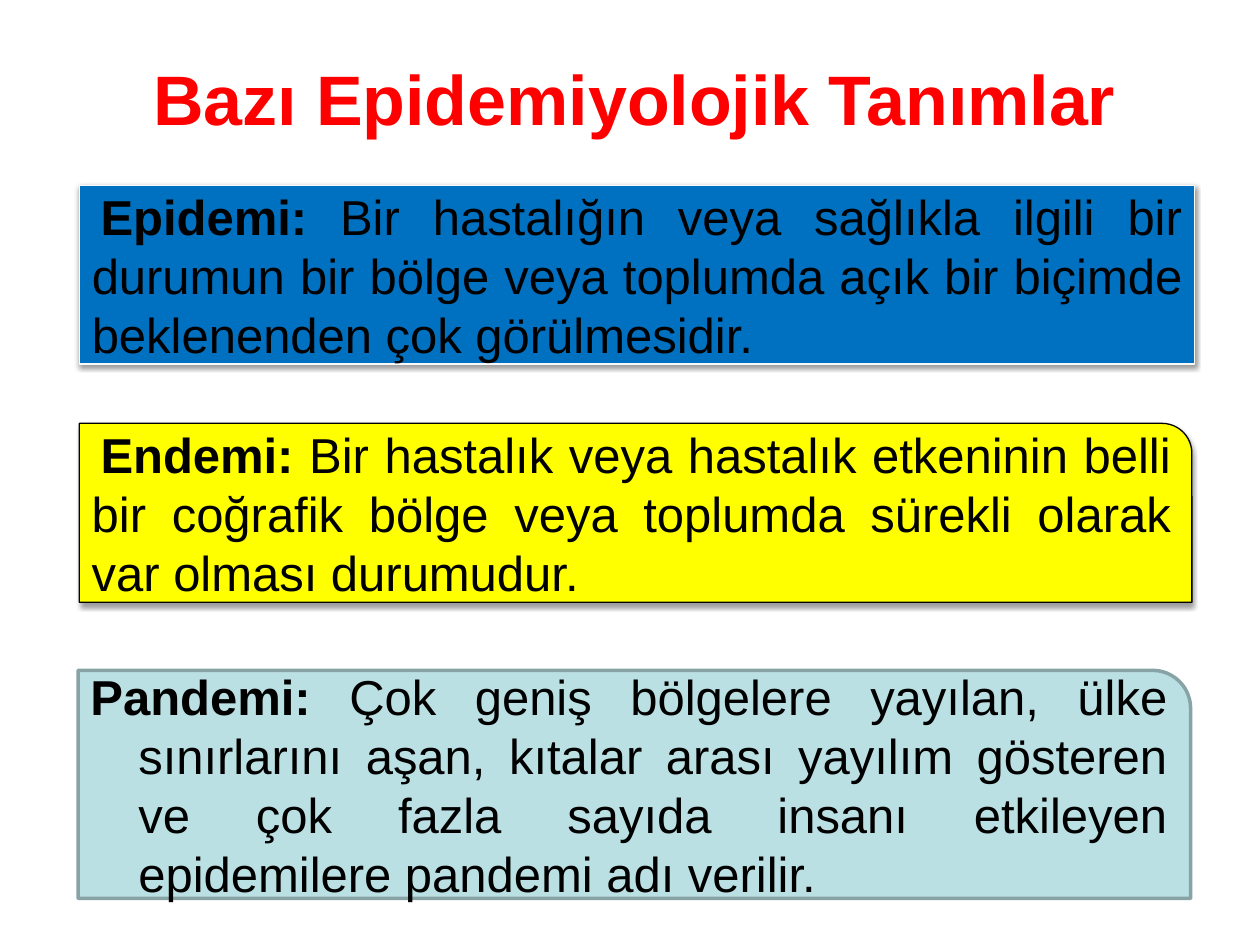
from dataclasses import dataclass

from lxml.etree import SubElement
from pptx import Presentation
from pptx.dml.color import RGBColor
from pptx.enum.shapes import MSO_SHAPE as Form
from pptx.enum.text import MSO_ANCHOR as Anchor, PP_ALIGN as Align
from pptx.oxml.ns import qn
from pptx.shapes.autoshape import Shape
from pptx.slide import Slide
from pptx.util import Inches, Pt


@dataclass
class Card:
    term: str
    text: str
    form: Form
    left: float
    top: float
    width: float
    height: float
    fill: str
    edge: str
    weight: float
    margin: float
    indent: float
    space: float
    shade: bool


CARDS = [
    Card("Epidemi:", " Bir hastalığın veya sağlıkla ilgili bir durumun bir bölge veya "
         "toplumda açık bir biçimde beklenenden çok görülmesidir.",
         Form.RECTANGLE, 0.63, 1.47, 8.85, 1.42,
         "0070C0", "F9F9F9", 0.75, 0, 0.07, 0, True),
    Card("Endemi:", " Bir hastalık veya hastalık etkeninin belli bir coğrafik bölge "
         "veya toplumda sürekli olarak var olması durumudur.",
         Form.ROUND_1_RECTANGLE, 0.63, 3.36, 8.83, 1.42,
         "FFFF00", "000000", 0.75, 0, 0.07, 0, True),
    Card("Pandemi:", " Çok geniş bölgelere yayılan, ülke sınırlarını aşan, kıtalar "
         "arası yayılım gösteren ve çok fazla sayıda insanı etkileyen epidemilere "
         "pandemi adı verilir.",
         Form.ROUND_1_RECTANGLE, 0.62, 5.32, 8.83, 1.81,
         "BBE0E3", "88A3A6", 2, 0.38, -0.38, 5.6, False),
]


def color(code: str) -> RGBColor:
    return RGBColor.from_string(code)


def add_shade(shape: Shape) -> None:
    effects = shape._element.spPr.find(qn("a:effectLst"))
    outer = SubElement(effects, qn("a:outerShdw"), blurRad=str(Pt(3.1)),
                       dist=str(Pt(1.6)), dir="5400000", rotWithShape="0")
    tint = SubElement(outer, qn("a:srgbClr"), val="000000")
    SubElement(tint, qn("a:alpha"), val="38000")


def add_title(slide: Slide, text: str) -> None:
    box = slide.shapes.add_textbox(Inches(0.31), Inches(0.44), Inches(9.45), Inches(1.25))
    frame = box.text_frame
    frame.word_wrap = True
    frame.vertical_anchor = Anchor.TOP
    frame.margin_top = 0
    para = frame.paragraphs[0]
    para.text = text
    para.alignment = Align.CENTER
    font = para.font
    font.name, font.size, font.bold = "Arial", Pt(40), True
    font.color.rgb = color("FF0000")


def add_card(slide: Slide, card: Card) -> None:
    shape = slide.shapes.add_shape(card.form, Inches(card.left), Inches(card.top),
                                   Inches(card.width), Inches(card.height))
    shape.fill.solid()
    shape.fill.fore_color.rgb = color(card.fill)
    shape.line.color.rgb = color(card.edge)
    shape.line.width = Pt(card.weight)
    shape.shadow.inherit = False
    if card.shade:
        add_shade(shape)
    frame = shape.text_frame
    frame.word_wrap = True
    frame.vertical_anchor = Anchor.MIDDLE
    para = frame.paragraphs[0]
    para.alignment = Align.JUSTIFY
    para.space_before = Pt(card.space)
    props = para._p.get_or_add_pPr()
    props.set("marL", str(Inches(card.margin)))
    props.set("indent", str(Inches(card.indent)))
    font = para.font
    font.name, font.size = "Arial", Pt(28)
    font.color.rgb = color("000000")
    for text, bold in ((card.term, True), (card.text, False)):
        run = para.add_run()
        run.text = text
        run.font.bold = bold


def main() -> None:
    deck = Presentation()
    deck.slide_width, deck.slide_height = Inches(10), Inches(7.5)
    slide = deck.slides.add_slide(deck.slide_layouts[6])
    add_title(slide, "Bazı Epidemiyolojik Tanımlar")
    for card in CARDS:
        add_card(slide, card)
    deck.save("out.pptx")


if __name__ == "__main__":
    main()
